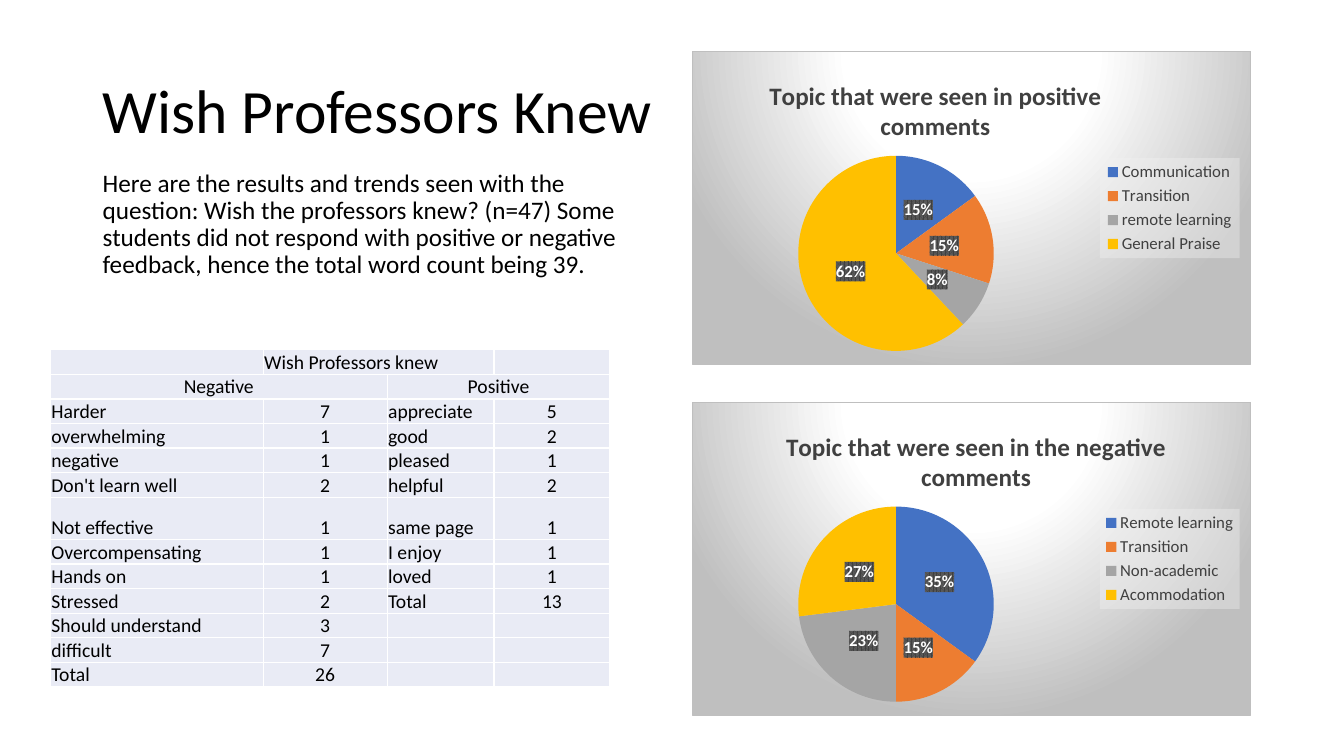
"""Build the survey slide on what students wish professors knew."""
from lxml import etree
from pptx import Presentation, util as u
from pptx.chart import data as chart_data
from pptx.dml.color import RGBColor
from pptx.enum import chart as ch, text as tx
from pptx.oxml import parse_xml
from pptx.oxml.ns import nsdecls, qn

COLORS = {"ink": "000000", "cell": "E9EBF5", "white": "FFFFFF", "edge": "BFBFBF",
          "grey": "404040", "stripe": "595959", "key": "F2F2F2"}
SLICES = ["4472C4", "ED7D31", "A5A5A5", "FFC000"]
FONT = "Calibri"


def style(font, size, color, bold=False):
    font.name, font.size, font.bold = FONT, u.Pt(size), bold
    font.color.rgb = RGBColor.from_string(COLORS[color])


def place(part, index, **fractions):
    for old in part.findall(qn("c:layout")):
        part.remove(old)
    modes = "".join(f'<c:{key}Mode val="edge"/>' for key in "xy")
    sizes = "".join(f'<c:{key} val="{value}"/>' for key, value in fractions.items())
    target = '<c:layoutTarget val="inner"/>' if index == 0 else ""
    part.insert(index, parse_xml(
        f'<c:layout {nsdecls("c")}><c:manualLayout>{target}{modes}{sizes}'
        '</c:manualLayout></c:layout>'))


prs = Presentation()
prs.slide_width, prs.slide_height = u.Inches(13.33), u.Inches(7.5)
slide = prs.slides.add_slide(prs.slide_layouts[6])

passages = [
    ("Wish Professors Knew", 44, (0.92, 0.4, 11.5, 1.45), tx.MSO_ANCHOR.MIDDLE, 0),
    ("Here are the results and trends seen with the question: Wish the professors knew? "
     "(n=47) Some students did not respond with positive or negative feedback, hence the "
     "total word count being 39.", 18, (0.92, 1.64, 5.41, 1.97), tx.MSO_ANCHOR.TOP, 10),
]
for wording, size, box, anchor, space in passages:
    frame = slide.shapes.add_textbox(*map(u.Inches, box)).text_frame
    frame.word_wrap = True
    frame.vertical_anchor = anchor
    frame.text = wording
    paragraph = frame.paragraphs[0]
    paragraph.line_spacing = 0.9
    paragraph.space_before = u.Pt(space)
    style(paragraph.runs[0].font, size, "ink")

word_counts = [
    ("", "Wish Professors knew", "", ""),
    ("Negative", "", "Positive", ""),
    ("Harder", "7", "appreciate", "5"),
    ("overwhelming", "1", "good", "2"),
    ("negative", "1", "pleased", "1"),
    ("Don't learn well", "2", "helpful", "2"),
    ("Not effective", "1", "same page", "1"),
    ("Overcompensating", "1", "I enjoy", "1"),
    ("Hands on", "1", "loved", "1"),
    ("Stressed", "2", "Total", "13"),
    ("Should understand", "3", "", ""),
    ("difficult", "7", "", ""),
    ("Total", "26", "", ""),
]
words = slide.shapes.add_table(
    len(word_counts), 4, u.Inches(0.5), u.Inches(3.47), u.Inches(5.55), u.Inches(3.06)).table
words.first_row = words.horz_banding = False
for column, width in zip(words.columns, (2.11, 1.23, 1.06, 1.15)):
    column.width = u.Inches(width)
for r, row in enumerate(word_counts):
    words.rows[r].height = u.Inches(0.42 if row[0] == "Not effective" else 0.22)
    for c, entry in enumerate(row):
        cell = words.cell(r, c)
        cell.fill.solid()
        cell.fill.fore_color.rgb = RGBColor.from_string(COLORS["cell"])
        cell.margin_left = cell.margin_right = cell.margin_top = u.Inches(0.01)
        cell.margin_bottom = 0
        cell.vertical_anchor = tx.MSO_ANCHOR.BOTTOM
        for i, side in enumerate("LRTB"):
            cell._tc.tcPr.insert(i, parse_xml(
                f'<a:ln{side} {nsdecls("a")} w="12700"><a:solidFill>'
                f'<a:srgbClr val="{COLORS["white"]}"/></a:solidFill></a:ln{side}>'))
        paragraph = cell.text_frame.paragraphs[0]
        if entry:
            paragraph.text = entry
            style(paragraph.runs[0].font, 14, "ink")
            if r == 1 or c % 2 and r > 1:
                paragraph.alignment = tx.PP_ALIGN.CENTER
        else:
            etree.SubElement(paragraph._p, qn("a:endParaRPr"), sz="1400")
for r, c in ((0, 1), (1, 0), (1, 2)):
    words.cell(r, c).merge(words.cell(r, c + 1))

topics = [
    ("Topic that were seen in positive comments", 0.51, 0.13,
     {"Communication": 15, "Transition": 15, "remote learning": 8, "General Praise": 62}),
    ("Topic that were seen in the negative comments", 3.99, 0.16,
     {"Remote learning": 35, "Transition": 15, "Non-academic": 23, "Acommodation": 27}),
]
for heading, top, heading_x, shares in topics:
    share_data = chart_data.CategoryChartData()
    share_data.categories = list(shares)
    share_data.add_series("Series 1", list(shares.values()))
    pie = slide.shapes.add_chart(
        ch.XL_CHART_TYPE.PIE, u.Inches(6.86), u.Inches(top), u.Inches(5.55), u.Inches(3.11),
        share_data).chart
    style(pie.font, 10, "ink")
    pie._chartSpace.find(qn("c:txPr")).addprevious(parse_xml(
        f'<c:spPr {nsdecls("c", "a")}><a:gradFill><a:gsLst>'
        f'<a:gs pos="0"><a:srgbClr val="{COLORS["white"]}"/></a:gs>'
        f'<a:gs pos="39000"><a:srgbClr val="{COLORS["white"]}"/></a:gs>'
        f'<a:gs pos="100000"><a:srgbClr val="{COLORS["edge"]}"/></a:gs></a:gsLst>'
        '<a:path path="circle"><a:fillToRect l="50000" t="-80000" r="50000" b="180000"/>'
        f'</a:path></a:gradFill><a:ln w="9525"><a:solidFill><a:srgbClr val="{COLORS["edge"]}"/>'
        '</a:solidFill></a:ln></c:spPr>'))

    pie.has_title = True
    pie.chart_title.text_frame.text = heading
    style(pie.chart_title.text_frame.paragraphs[0].runs[0].font, 18, "grey", True)
    place(pie.chart_title._element, 1, x=heading_x, y=0.07)
    place(pie._chartSpace.chart.plotArea, 0, x=0.19, y=0.33, w=0.35, h=0.63)

    pie.has_legend = True
    pie.legend.position = ch.XL_LEGEND_POSITION.RIGHT
    pie.legend.include_in_layout = False
    style(pie.legend.font, 12, "grey")
    legend = pie.legend._element
    place(legend, 1, x=0.73, y=0.34, w=0.25, h=0.32)
    legend.find(qn("c:txPr")).addprevious(parse_xml(
        f'<c:spPr {nsdecls("c", "a")}><a:solidFill><a:srgbClr val="{COLORS["key"]}">'
        '<a:alpha val="39000"/></a:srgbClr></a:solidFill></c:spPr>'))

    plot = pie.plots[0]
    plot.vary_by_categories = True
    for i, color in enumerate(SLICES):
        wedge = plot.series[0].points[i].format.fill
        wedge.solid()
        wedge.fore_color.rgb = RGBColor.from_string(color)
    labels = plot.series[0].data_labels
    labels.show_percentage, labels.show_value = True, False
    labels.number_format, labels.number_format_is_linked = "0%", False
    labels.position = ch.XL_LABEL_POSITION.CENTER
    style(labels.font, 12, "white", True)
    labels._element.find(qn("c:txPr")).addprevious(parse_xml(
        f'<c:spPr {nsdecls("c", "a")}><a:pattFill prst="pct75">'
        f'<a:fgClr><a:srgbClr val="{COLORS["grey"]}"/></a:fgClr>'
        f'<a:bgClr><a:srgbClr val="{COLORS["stripe"]}"/></a:bgClr></a:pattFill></c:spPr>'))

prs.save("out.pptx")
